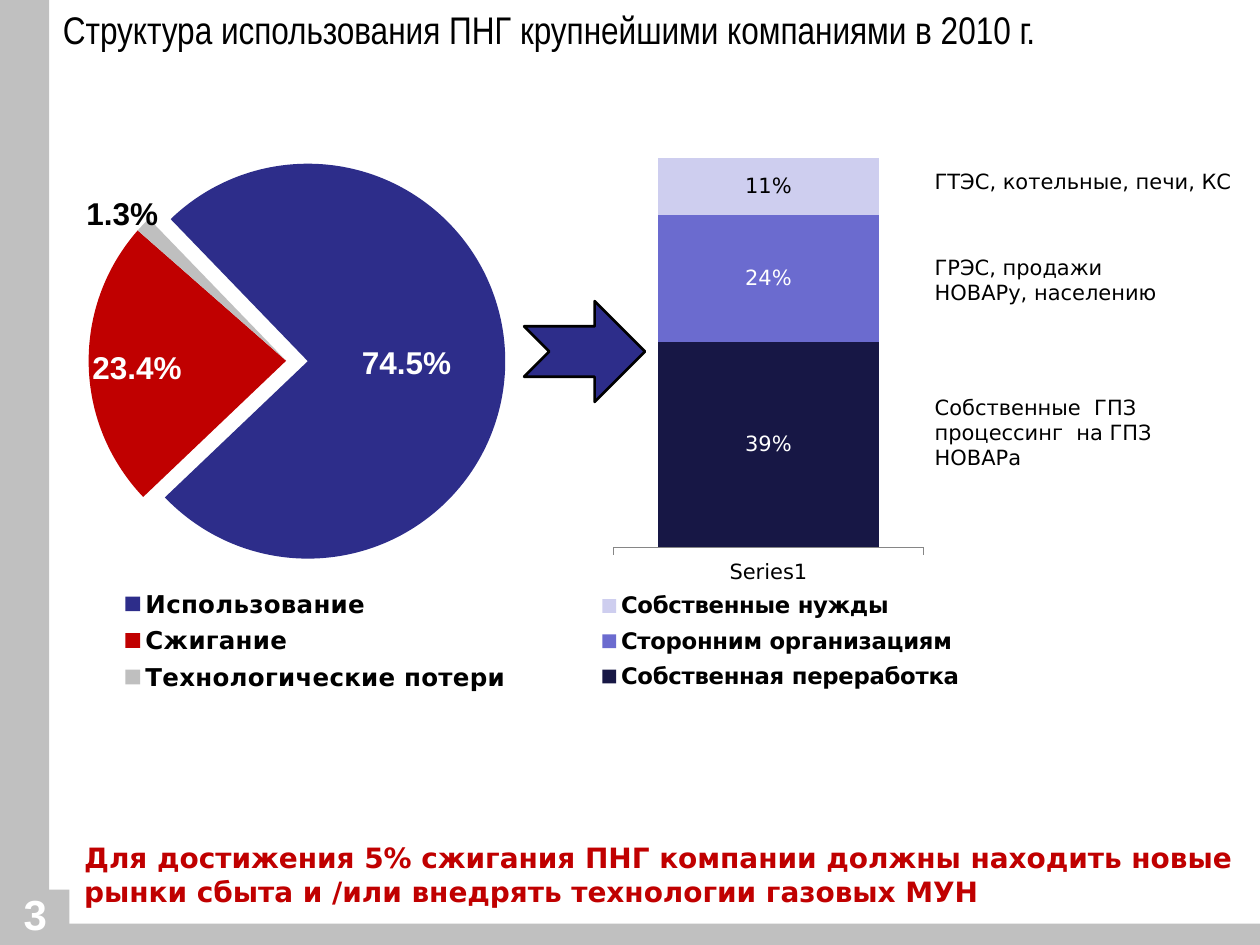
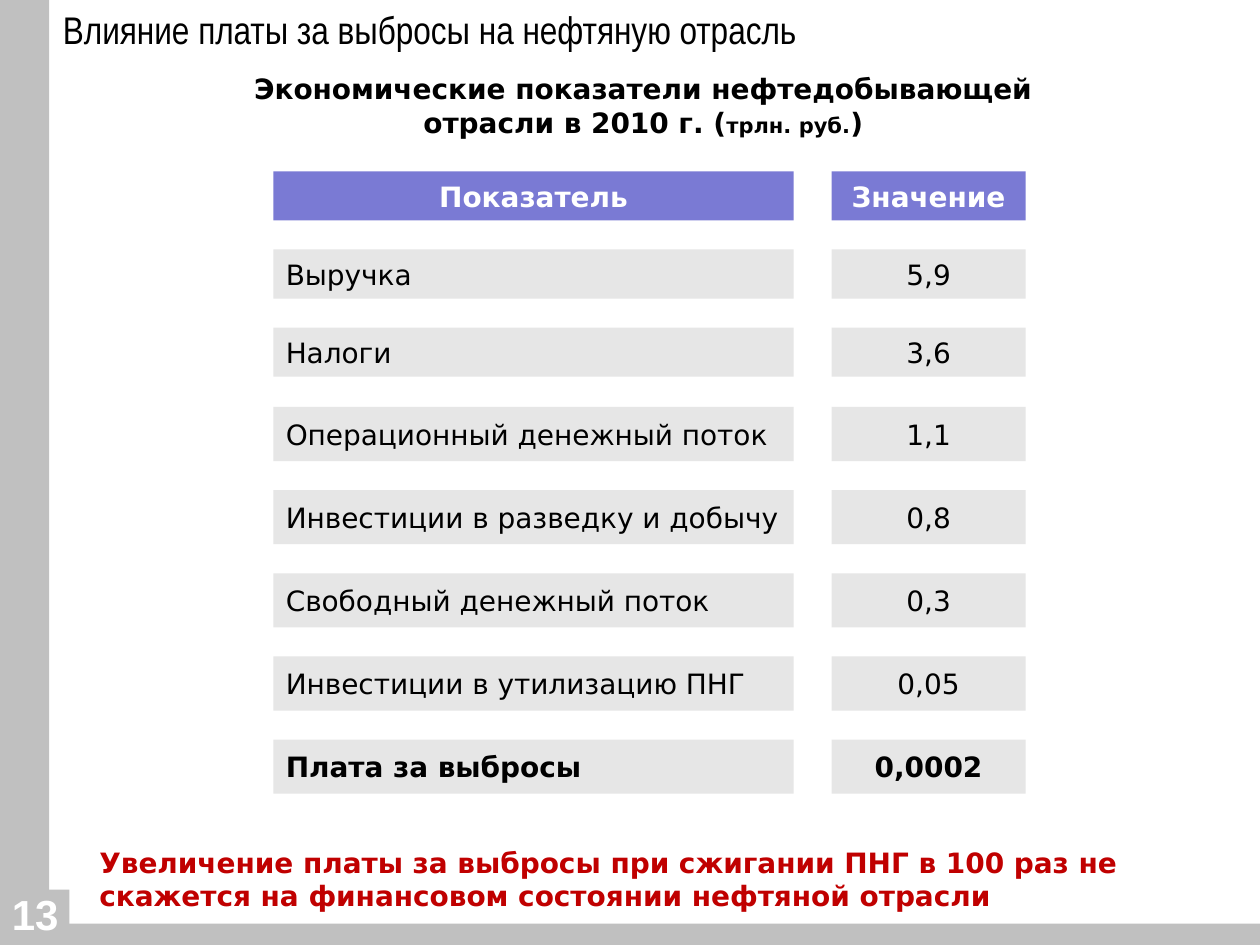
from lxml import etree
from pptx import Presentation
from pptx.chart.data import CategoryChartData
from pptx.dml.color import RGBColor
from pptx.enum.chart import XL_CHART_TYPE, XL_LABEL_POSITION, XL_LEGEND_POSITION, XL_TICK_LABEL_POSITION, XL_TICK_MARK
from pptx.enum.shapes import MSO_SHAPE
from pptx.enum.text import MSO_ANCHOR, MSO_AUTO_SIZE, PP_ALIGN
from pptx.oxml.ns import qn
from pptx.util import Inches, Pt

PIE, STACKED = XL_CHART_TYPE.PIE, XL_CHART_TYPE.COLUMN_STACKED
CENTER_LABEL = XL_LABEL_POSITION.CENTER
LEFT, CENTER = PP_ALIGN.LEFT, PP_ALIGN.CENTER
TOP, MIDDLE = MSO_ANCHOR.TOP, MSO_ANCHOR.MIDDLE
RECT, ARROW = MSO_SHAPE.RECTANGLE, MSO_SHAPE.NOTCHED_RIGHT_ARROW

# Shared style
WIDTH, HEIGHT = 10, 7.5
BODY, TITLE, NUMBER = "DejaVu Sans", "Arial Narrow", "Arial"
BLACK, WHITE, RED, NAVY = "000000", "FFFFFF", "C00000", "2D2D8A"
FRAME, HEADER, CELL = "C0C0C0", "7A7AD4", "E6E6E6"
FRAME_BANDS = [(0, 0, 0.39, 7.1), (0, 7.06, 0.55, 0.32), (0, 7.33, WIDTH, 0.17)]

# Content: use of associated gas
GAS_TITLE = "Структура использования ПНГ крупнейшими компаниями в 2010 г."
GAS_USE = [  # name, share, fill, label colour, label shift as share of the chart
    ("Использование", 0.745, NAVY, WHITE, None),
    ("Сжигание", 0.234, RED, WHITE, (-0.06, 0.01)),
    ("Технологические потери", 0.013, "BFBFBF", BLACK, (-0.11, -0.14)),
]
USE_SPLIT = [  # name, share, fill, label colour
    ("Собственная переработка", 0.39, "171745", WHITE),
    ("Сторонним организациям", 0.24, "6B6BCF", WHITE),
    ("Собственные нужды", 0.11, "CECEEF", BLACK),
]
CONSUMERS = [  # text, top, width, height
    ("ГТЭС, котельные, печи, КС", 1.29, 2.56, 0.5),
    ("ГРЭС, продажи НОВАРу, населению", 1.97, 2.14, 0.5),
    ("Собственные  ГПЗ процессинг  на ГПЗ НОВАРа", 3.08, 2.36, 0.71),
]
GAS_CONCLUSION = ("Для достижения 5% сжигания ПНГ компании должны находить новые "
                  "рынки сбыта и /или внедрять технологии газовых МУН")

# Content: effect of emission charges
CHARGE_TITLE = "Влияние платы за выбросы на нефтяную отрасль"
INDICATORS_TITLE = [
    ("Экономические показатели нефтедобывающей отрасли в 2010 г. (", 16),
    ("трлн. руб.", 12),
    (")", 16),
]
INDICATORS = [
    ("Показатель", "Значение"),
    ("Выручка", "5,9"),
    ("Налоги", "3,6"),
    ("Операционный денежный поток", "1,1"),
    ("Инвестиции в разведку и добычу", "0,8"),
    ("Свободный денежный поток", "0,3"),
    ("Инвестиции в утилизацию ПНГ", "0,05"),
    ("Плата за выбросы", "0,0002"),
]
CHARGE_CONCLUSION = ("Увеличение платы за выбросы при сжигании ПНГ в 100 раз не "
                     "скажется на финансовом состоянии нефтяной отрасли")
COLUMNS = [(2.17, 4.13, LEFT), (6.6, 1.54, CENTER)]  # left, width, alignment
ROW_GROUPS = [(1.36, 0.39, INDICATORS[:3]), (3.23, 0.43, INDICATORS[3:])]  # top, row height, rows
ROW_GAP = 0.23


def color(hex_code):
    return RGBColor.from_string(hex_code)


def inches(place):
    return [Inches(length) for length in place]


def style_font(font, size, hex_code=BLACK, bold=False, face=BODY):
    font.size, font.bold, font.name = Pt(size), bold, face
    font.color.rgb = color(hex_code)


def write(frame, pieces, hex_code=BLACK, bold=False, face=BODY, align=LEFT, anchor=TOP):
    """Fill a frame with one paragraph of (text, size) runs."""
    frame.word_wrap = True
    frame.vertical_anchor = anchor
    paragraph = frame.paragraphs[0]
    paragraph.alignment = align
    for text, size in pieces:
        run = paragraph.add_run()
        run.text = text
        style_font(run.font, size, hex_code, bold, face)


def add_text(slide, place, pieces, **style):
    frame = slide.shapes.add_textbox(*inches(place)).text_frame
    frame.auto_size = MSO_AUTO_SIZE.SHAPE_TO_FIT_TEXT
    write(frame, pieces, **style)
    return frame


def add_block(slide, place, fill, kind=RECT):
    block = slide.shapes.add_shape(kind, *inches(place))
    block.shadow.inherit = False
    block.fill.solid()
    block.fill.fore_color.rgb = color(fill)
    block.line.fill.background()
    return block


def new_slide(deck, number, title):
    slide = deck.slides.add_slide(deck.slide_layouts[6])
    for band in FRAME_BANDS:
        add_block(slide, band, FRAME)
    add_text(slide, (-0.25, 7, 1.06, 0.57), [(number, 24)],
             hex_code=WHITE, bold=True, face=NUMBER, align=CENTER)
    heading = add_text(slide, (0.5, 0.09, 9, 0.33), [(title, 22)], face=TITLE, anchor=MIDDLE)
    heading.paragraphs[0].line_spacing = 0.9
    heading.margin_left = heading.margin_right = heading.margin_top = heading.margin_bottom = 0
    return slide


# Chart helpers
def manual_layout(**values):
    layout = etree.Element(qn("c:layout"))
    manual = etree.SubElement(layout, qn("c:manualLayout"))
    for tag, value in values.items():
        etree.SubElement(manual, qn("c:" + tag)).set("val", str(value))
    return layout


def box_layout(box, **target):
    x, y, w, h = box
    return manual_layout(**target, xMode="edge", yMode="edge", x=x, y=y, w=w, h=h)


def drop(parent, tag):
    for child in parent.findall(qn(tag)):
        parent.remove(child)


def add_chart(slide, kind, place, categories, series, plot_box, legend_box, legend_size):
    data = CategoryChartData()
    data.categories = categories
    for name, values in series:
        data.add_series(name, values)
    chart = slide.shapes.add_chart(kind, *inches(place), data).chart
    chart.has_title = False
    style_font(chart.font, 12)
    chart.has_legend = True
    legend = chart.legend
    legend.position = XL_LEGEND_POSITION.RIGHT
    legend.include_in_layout = False
    style_font(legend.font, legend_size, bold=True)
    drop(legend._element, "c:layout")
    legend._element.find(qn("c:legendPos")).addnext(box_layout(legend_box))
    plot_area = chart._chartSpace.chart.plotArea
    drop(plot_area, "c:layout")
    plot_area.insert(0, box_layout(plot_box, layoutTarget="inner"))
    return chart


def paint(part, hex_code):
    part.format.fill.solid()
    part.format.fill.fore_color.rgb = color(hex_code)


def show_values(labels, number_format):
    labels.show_value = True
    labels.number_format, labels.number_format_is_linked = number_format, False
    labels.position = CENTER_LABEL


def add_gas_pie(slide):
    names = [use[0] for use in GAS_USE]
    shares = [use[1] for use in GAS_USE]
    chart = add_chart(slide, PIE, (0.57, 1.11, 6.67, 4.44), names, [("Series 1", shares)],
                      (0.02, 0.04, 0.47, 0.71), (0.05, 0.79, 0.48, 0.21), 14)
    pie = chart.plots[0]
    drop(pie._element, "c:firstSliceAng")
    etree.SubElement(pie._element, qn("c:firstSliceAng")).set("val", "316")
    slices = pie.series[0]
    show_values(slices.data_labels, "0.0%")
    style_font(slices.data_labels.font, 18, WHITE, True, NUMBER)
    for index, (_, _, fill, label_color, shift) in enumerate(GAS_USE):
        paint(slices.points[index], fill)
        if shift:
            label = slices.points[index].data_label
            style_font(label.font, 18, label_color, True, NUMBER)
            label.position = CENTER_LABEL
            label_xml = slices.data_labels._element.findall(qn("c:dLbl"))[-1]
            label_xml.find(qn("c:idx")).addnext(manual_layout(x=shift[0], y=shift[1]))
    # Pull out the used share
    explosion = etree.Element(qn("c:explosion"))
    explosion.set("val", "11")
    slices._element.find(qn("c:dPt")).find(qn("c:spPr")).addprevious(explosion)


def add_split_column(slide):
    series = [(name, [share]) for name, share, _, _ in USE_SPLIT]
    chart = add_chart(slide, STACKED, (4.4, 0.77, 3.59, 4.79), ["Series1"], series,
                      (0.13, 0.048, 0.687, 0.698), (0.075, 0.807, 0.85, 0.19), 13)
    column = chart.plots[0]
    column.gap_width, column.overlap = 40, 100
    for part, (_, _, fill, label_color) in zip(column.series, USE_SPLIT):
        paint(part, fill)
        show_values(part.data_labels, "0%")
        style_font(part.data_labels.font, 12, label_color)
    shares = chart.value_axis
    shares.minimum_scale, shares.maximum_scale = 0, 0.8
    shares.has_major_gridlines = False
    shares.visible = False
    base = chart.category_axis
    base.major_tick_mark = XL_TICK_MARK.OUTSIDE
    base.tick_label_position = XL_TICK_LABEL_POSITION.NEXT_TO_AXIS
    base.format.line.color.rgb = color("868686")


def add_gas_slide(deck):
    slide = new_slide(deck, "3", GAS_TITLE)
    add_gas_pie(slide)
    arrow = add_block(slide, (4.16, 2.39, 0.96, 0.8), NAVY, ARROW)
    arrow.line.color.rgb = color(BLACK)
    arrow.line.width = Pt(1.5)
    add_split_column(slide)
    for text, top, width, height in CONSUMERS:
        add_text(slide, (7.32, top, width, height), [(text, 12)])
    add_text(slide, (0.57, 6.62, 9.33, 0.64), [(GAS_CONCLUSION, 16)],
             hex_code=RED, bold=True, anchor=MIDDLE)


def add_charge_slide(deck):
    slide = new_slide(deck, "13", CHARGE_TITLE)
    add_text(slide, (1.74, 0.52, 6.73, 0.64), INDICATORS_TITLE, bold=True, align=CENTER)
    for group_top, height, rows in ROW_GROUPS:
        for index, cells in enumerate(rows):
            top = group_top + index * (height + ROW_GAP)
            is_header = cells == INDICATORS[0]
            is_bold = is_header or cells == INDICATORS[-1]
            for text, (left, width, align) in zip(cells, COLUMNS):
                cell = add_block(slide, (left, top, width, height), HEADER if is_header else CELL)
                write(cell.text_frame, [(text, 16)], hex_code=WHITE if is_header else BLACK,
                      bold=is_bold, align=CENTER if is_header else align, anchor=MIDDLE)
    add_text(slide, (0.69, 6.66, 9.21, 0.64), [(CHARGE_CONCLUSION, 16)], hex_code=RED, bold=True)


def main():
    deck = Presentation()
    deck.slide_width, deck.slide_height = inches((WIDTH, HEIGHT))
    add_gas_slide(deck)
    add_charge_slide(deck)
    deck.save("out.pptx")


if __name__ == "__main__":
    main()
